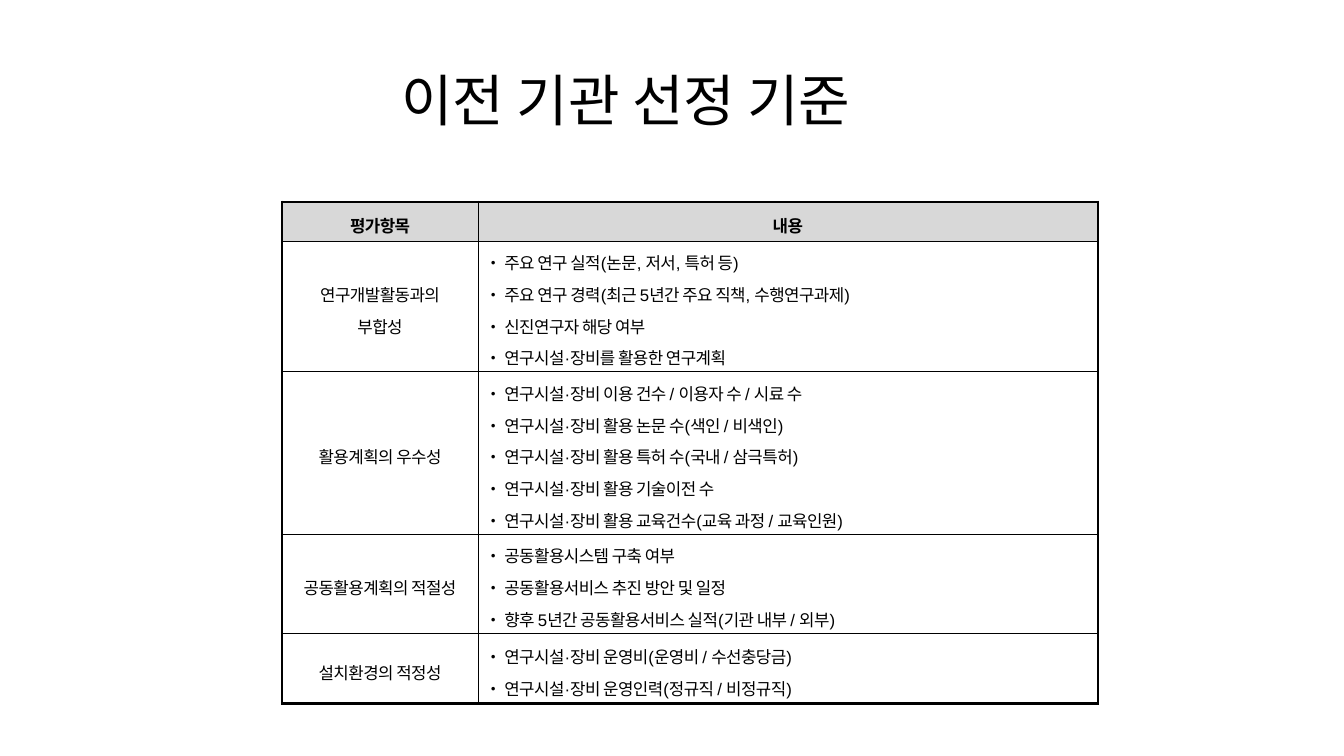
from lxml.etree import SubElement as Sub
from pptx import Presentation
from pptx.dml.color import RGBColor
from pptx.enum.text import MSO_ANCHOR, MSO_AUTO_SIZE, PP_ALIGN
from pptx.oxml.ns import qn
from pptx.util import Inches, Pt

TITLE = "이전 기관 선정 기준"
HEAD = ("평가항목", "내용")
ITEMS = [
    (["연구개발활동과의", "부합성"],
     ["주요 연구 실적(논문, 저서, 특허 등)",
      "주요 연구 경력(최근 5년간 주요 직책, 수행연구과제)",
      "신진연구자 해당 여부",
      "연구시설·장비를 활용한 연구계획"]),
    (["활용계획의 우수성"],
     ["연구시설·장비 이용 건수 / 이용자 수 / 시료 수",
      "연구시설·장비 활용 논문 수(색인 / 비색인)",
      "연구시설·장비 활용 특허 수(국내 / 삼극특허)",
      "연구시설·장비 활용 기술이전 수",
      "연구시설·장비 활용 교육건수(교육 과정 / 교육인원)"]),
    (["공동활용계획의 적절성"],
     ["공동활용시스템 구축 여부",
      "공동활용서비스 추진 방안 및 일정",
      "향후 5년간 공동활용서비스 실적(기관 내부 / 외부)"]),
    (["설치환경의 적정성"],
     ["연구시설·장비 운영비(운영비 / 수선충당금)",
      "연구시설·장비 운영인력(정규직 / 비정규직)"]),
]
COLS = (1.94, 6.15)
ROWS = (0.39, 1.2, 1.47, 0.94, 0.7)
LEFT, TOP = 2.8, 2
THICK, THIN = 1.7, 0.28
INK, GREY = "000000", "D8D8D8"
LATIN, HANGUL = "Arial", "Noto Sans CJK KR"


def color(code):
    return RGBColor.from_string(code)


def add_run(para, text, size, face, bold=False):
    run = para.add_run()
    run.text = text
    font = run.font
    font.size, font.name, font.bold = Pt(size), face, bold
    font.color.rgb = color(INK)
    Sub(run._r.get_or_add_rPr(), qn("a:ea"), typeface=HANGUL)
    return run


def draw_edges(cell, row, col):
    """Thick lines round the table, thin lines inside it."""
    outer = {"L": col == 0, "R": col == len(COLS) - 1,
             "T": row == 0, "B": row == len(ROWS) - 1}
    props = cell._tc.get_or_add_tcPr()
    for side, edge in outer.items():
        width = Pt(THICK if edge else THIN)
        line = Sub(props, qn("a:ln" + side), w=str(width))
        fill = Sub(line, qn("a:solidFill"))
        Sub(fill, qn("a:srgbClr"), val=INK)


def fill_cell(cell, lines, row, col):
    head = row == 0
    cell.vertical_anchor = MSO_ANCHOR.MIDDLE
    cell.margin_left = cell.margin_right = Inches(0.07)
    cell.margin_top = cell.margin_bottom = Inches(0.02)
    draw_edges(cell, row, col)
    if head:
        cell.fill.solid()
        cell.fill.fore_color.rgb = color(GREY)
    else:
        cell.fill.background()
    frame = cell.text_frame
    for i, text in enumerate(lines):
        para = frame.add_paragraph() if i else frame.paragraphs[0]
        para.line_spacing = 1.3
        listed = col == 1 and not head
        para.alignment = PP_ALIGN.LEFT if listed else PP_ALIGN.CENTER
        run = add_run(para, "• " + text if listed else text, 12, LATIN, head)
        run._r.get_or_add_rPr().set("spc", "-40")


def add_title(slide):
    box = slide.shapes.add_textbox(
        Inches(3.88), Inches(0.6), Inches(5.28), Inches(0.77))
    frame = box.text_frame
    frame.word_wrap = False
    frame.auto_size = MSO_AUTO_SIZE.SHAPE_TO_FIT_TEXT
    add_run(frame.paragraphs[0], TITLE, 40, HANGUL)


def add_grid(slide):
    table = slide.shapes.add_table(
        len(ROWS), len(COLS), Inches(LEFT), Inches(TOP),
        Inches(sum(COLS)), Inches(sum(ROWS))).table
    table.horz_banding = False
    for col, width in zip(table.columns, COLS):
        col.width = Inches(width)
    for row, height in zip(table.rows, ROWS):
        row.height = Inches(height)
    for r, pair in enumerate([[[h] for h in HEAD], *ITEMS]):
        for c, lines in enumerate(pair):
            fill_cell(table.cell(r, c), lines, r, c)


def main():
    deck = Presentation()
    deck.slide_width, deck.slide_height = Inches(13.33), Inches(7.5)
    slide = deck.slides.add_slide(deck.slide_layouts[6])
    add_grid(slide)
    add_title(slide)
    deck.save("out.pptx")


if __name__ == "__main__":
    main()
